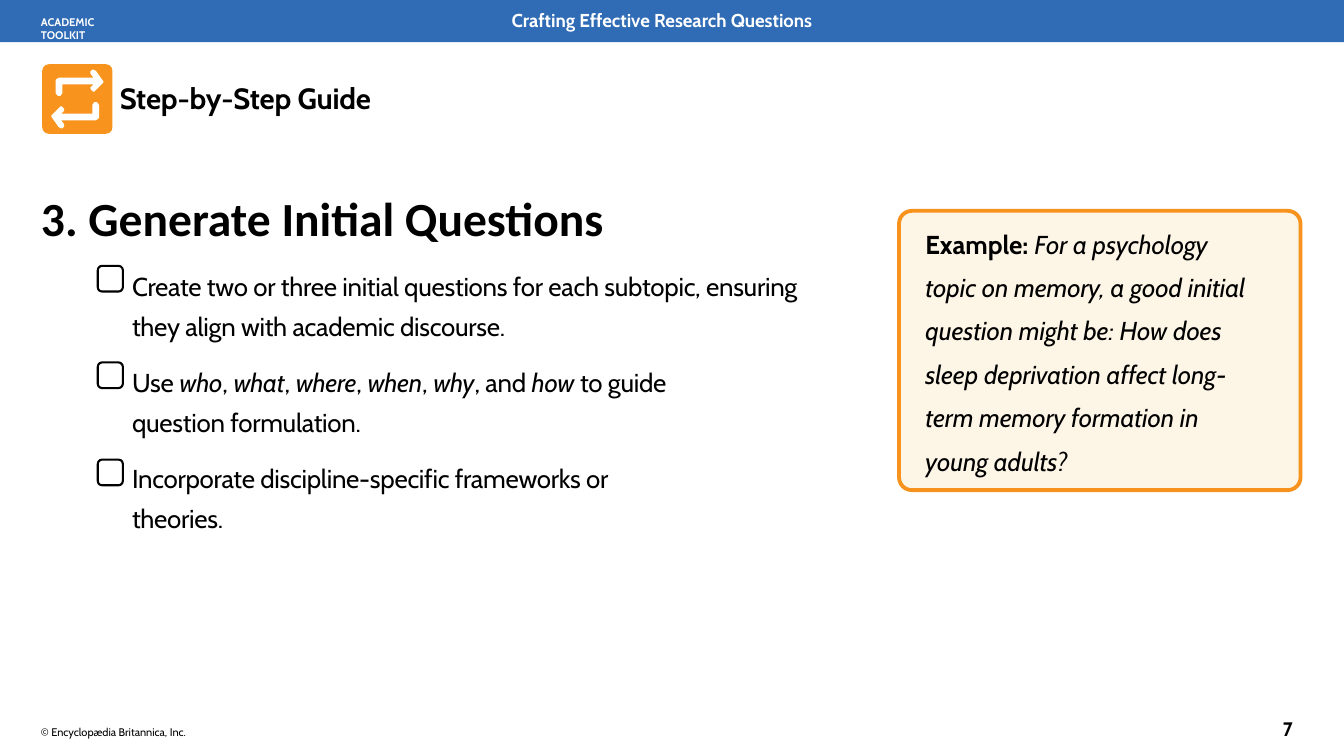
from pptx import Presentation
from pptx.dml.color import RGBColor
from pptx.enum.shapes import MSO_SHAPE
from pptx.util import Emu, Pt

RECTANGLE = MSO_SHAPE.RECTANGLE
ROUNDED = MSO_SHAPE.ROUNDED_RECTANGLE
PX = 9144
SLIDE_W, SLIDE_H = 2199, 1237
BLUE, ORANGE, CREAM, BLACK, WHITE = "306CB5", "F7931C", "FDF5E6", "000000", "FFFFFF"
ICON_ORANGE = "F8941D"
BODY = {"name": "Cabin", "size": Pt(30.5)}
SMALL = {"name": "Cabin", "size": Pt(13)}
ARROW = [
    (93, 67), (92, 65), (91, 64), (89, 62), (85, 62), (84, 64), (83, 65), (82, 67),
    (82, 81), (31, 81), (35, 77), (36, 76), (36, 74), (35, 72), (32, 69), (30, 69),
    (16, 83), (15, 84), (15, 86), (27, 103), (31, 105), (33, 105), (34, 104),
    (36, 102), (36, 98), (35, 97), (31, 92), (87, 92), (89, 91), (91, 90), (92, 89),
    (93, 87),
]
STEPS = [
    ("Create two or three initial questions for each subtopic, ensuring "
     "they align with academic discourse.", 0),
    ("Use *who*, *what*, *where*, *when*, *why*, and *how* to guide "
     "question formulation.", 183),
    ("Incorporate discipline-specific frameworks or theories.", 290),
]
EXAMPLE = [
    ("Example: ", {"bold": True}),
    ("For a psychology topic on memory, a good initial question might be: How does "
     "sleep deprivation affect long-term memory formation in young adults?",
     {"italic": True}),
]


def px(length):
    """Turn px into EMU."""
    return Emu(round(length * PX))


def color(code):
    """Turn a hex string into a colour."""
    return RGBColor.from_string(code)


def paint(shape, fill=None, line=None, weight=0):
    """Set the fill and outline of a shape and take off its shadow."""
    shape.shadow.inherit = False
    if fill:
        shape.fill.solid()
        shape.fill.fore_color.rgb = color(fill)
    else:
        shape.fill.background()
    if line:
        shape.line.color.rgb = color(line)
        shape.line.width = Pt(weight)
    else:
        shape.line.fill.background()


def add_block(slide, kind, box, radius=0, **look):
    """Add a plain or rounded block with a corner radius in px."""
    block = slide.shapes.add_shape(kind, *map(px, box))
    if radius:
        block.adjustments[0] = radius / min(box[2:])
    paint(block, **look)


def add_frame(slide, box):
    """Add a wrapping text box with almost no margins and return its frame."""
    frame = slide.shapes.add_textbox(*map(px, box)).text_frame
    margins = {"margin_left": 0, "margin_right": 0, "margin_top": px(1),
               "margin_bottom": 0, "word_wrap": True}
    for key, value in margins.items():
        setattr(frame, key, value)
    return frame


def fill_paragraph(paragraph, runs, font, ink=BLACK, spacing=0, **layout):
    """Write formatted runs into a paragraph."""
    for key, value in layout.items():
        setattr(paragraph, key, value)
    for words, extra in runs:
        run = paragraph.add_run()
        run.text = words
        for key, value in {**font, **extra}.items():
            setattr(run.font, key, value)
        run.font.color.rgb = color(ink)
        if spacing:
            run.font._element.set("spc", str(spacing))


def add_label(slide, box, words, font, ink=BLACK, spacing=0):
    """Add a text box with one run."""
    frame = add_frame(slide, box)
    fill_paragraph(frame.paragraphs[0], [(words, {})], font, ink, spacing)


def italic_runs(marked):
    """Split text at asterisks into upright and italic runs."""
    return [(part, {"italic": i % 2 == 1}) for i, part in enumerate(marked.split("*"))]


def add_header(slide, left, top, width, height):
    """Draw the top bar with the series name and the title."""
    add_block(slide, RECTANGLE, (left, top, width, height), fill=BLUE)
    add_label(slide, (left + 837, top + 13, 525, 40), "Crafting Effective Research Questions",
              {"name": "Cabin", "size": Pt(22), "bold": True}, WHITE)
    add_label(slide, (left + 67, top + 24, 163, 25), "ACADEMIC TOOLKIT",
              {**SMALL, "bold": True}, WHITE)


def add_guide_title(slide, left, top, width, height):
    """Draw the icon of two opposite arrows and the section title."""
    add_block(slide, ROUNDED, (left, top, width, height), 11, fill=ICON_ORANGE)
    turned = [(width - x, height - y) for x, y in ARROW]
    builder = slide.shapes.build_freeform(*ARROW[0], scale=PX)
    builder.add_line_segments(ARROW[1:])
    builder.move_to(*turned[0])
    builder.add_line_segments(turned[1:])
    paint(builder.convert_to_shape(px(left), px(top)), fill=WHITE)
    add_label(slide, (left + width + 12, top + 25, 422, 61), "Step-by-Step Guide",
              {"name": "Cabin", "size": Pt(34.5), "bold": True}, spacing=-20)


def add_checklist(slide, left, top, width, height):
    """Write the step heading and its list with a checkbox for each item."""
    frame = add_frame(slide, (left, top, width, height))
    fill_paragraph(frame.paragraphs[0], [("3. Generate Initial Questions", {})],
                   {"name": "Calibri", "size": Pt(56), "bold": True})
    for i, (words, right_indent) in enumerate(STEPS):
        item = frame.add_paragraph()
        properties = item._p.get_or_add_pPr()
        properties.set("marL", str(px(149)))
        properties.set("marR", str(px(right_indent)))
        fill_paragraph(item, italic_runs(words), BODY, spacing=-30,
                       line_spacing=1.3, space_before=Pt(18))
        add_block(slide, ROUNDED, (left + 93, top + 127 + 317 * i // 2, 41, 42), 7,
                  line=BLACK, weight=2.47)


def add_example(slide, left, top, width, height):
    """Draw the example card."""
    add_block(slide, ROUNDED, (left, top, width, height), 21,
              fill=CREAM, line=ORANGE, weight=4.5)
    frame = add_frame(slide, (left + 43, top + 7, 548, 429))
    fill_paragraph(frame.paragraphs[0], EXAMPLE, BODY, spacing=-6, line_spacing=1.4)


def add_footer(slide, left, top, width, height):
    """Write the copyright line and the page number."""
    add_label(slide, (left, top + 14, 257, 25), "© Encyclopædia Britannica, Inc.", SMALL)
    add_label(slide, (left + width - 37, top, 37, height), "7",
              {"name": "Cabin", "size": Pt(23), "bold": True})


def main():
    """Build and save the slide."""
    deck = Presentation()
    deck.slide_width, deck.slide_height = px(SLIDE_W), px(SLIDE_H)
    slide = deck.slides.add_slide(deck.slide_layouts[6])
    add_header(slide, 0, 0, SLIDE_W, 69)
    add_guide_title(slide, 69, 105, 115, 114)
    add_checklist(slide, 67, 308, 1295, 506)
    add_example(slide, 1471, 345, 657, 457)
    add_footer(slide, 67, 1172, 2069, 41)
    deck.save("out.pptx")


if __name__ == "__main__":
    main()
